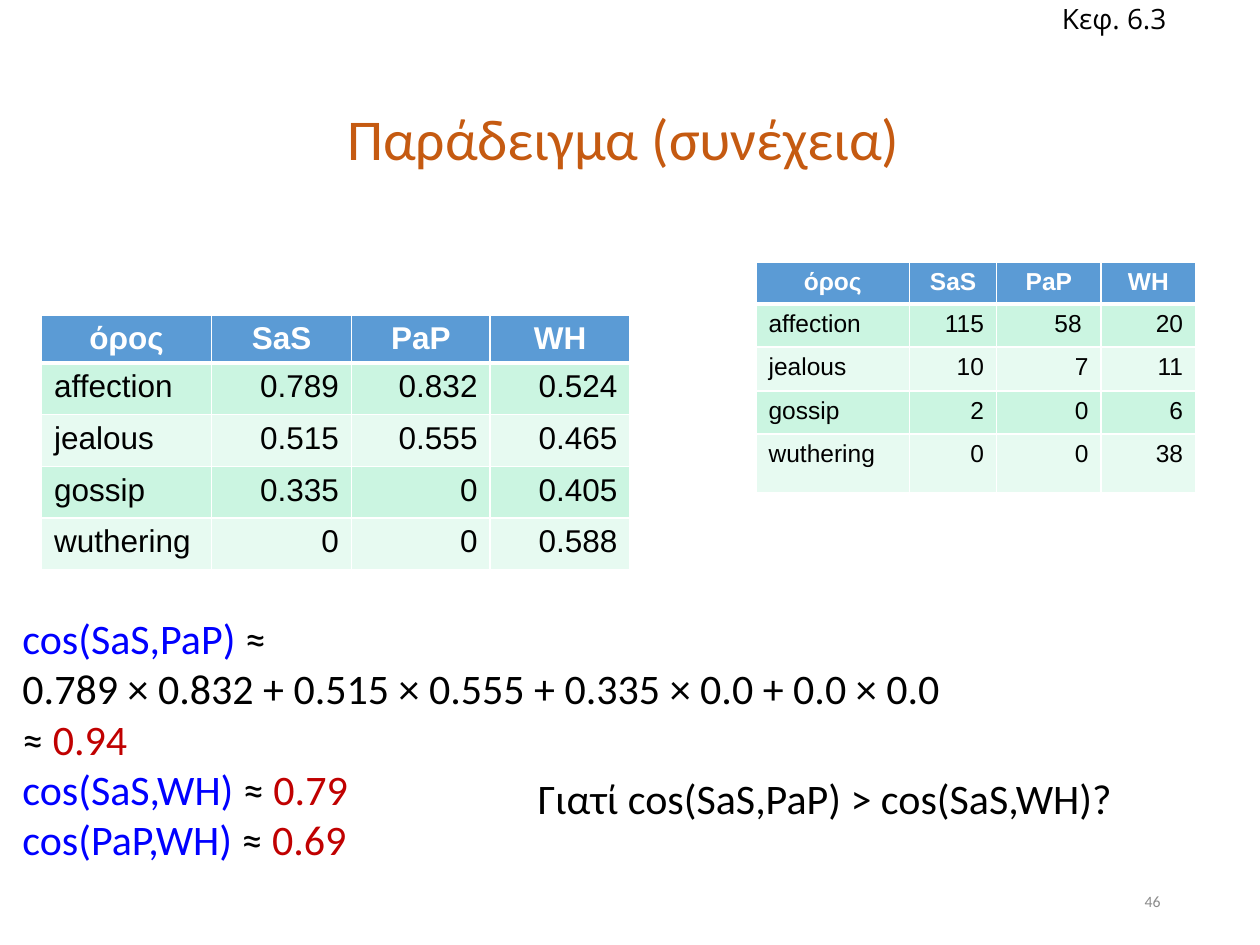
"""Build the slide that compares three novels by cosine similarity."""
from dataclasses import dataclass

from lxml.etree import SubElement
from pptx import Presentation
from pptx.dml.color import RGBColor
from pptx.enum.text import MSO_ANCHOR as Anchor, MSO_AUTO_SIZE as AutoSize, PP_ALIGN as Align
from pptx.oxml.ns import qn
from pptx.util import Inches, Pt

COLORS = {
    "title": "C55A11", "text": "000000", "cosine": "0000FF", "result": "C00000",
    "page": "8C8C8C", "white": "FFFFFF", "header": "5B9BD5",
    "odd": "CBF5E1", "even": "E7FAF1",
}
WIDTH, HEIGHT = Inches(10), Inches(7.5)
Lines = list[list[tuple[str, str]]]


@dataclass
class Note:
    """Text lines with a box in percent of the slide."""
    box: tuple[float, float, float, float]
    lines: Lines
    size: float
    font: str = "Calibri"
    align: Align = Align.LEFT
    anchor: Anchor = Anchor.TOP
    grows: bool = True


@dataclass
class TermTable:
    """Term weights with columns and rows in percent of the slide."""
    left: float
    top: float
    columns: list[float]
    rows: list[float]
    size: float
    weights: list[list[str]]


def across(share: float) -> int:
    """Turn a percentage of the slide width into a length."""
    return round(WIDTH * share / 100)


def down(share: float) -> int:
    """Turn a percentage of the slide height into a length."""
    return round(HEIGHT * share / 100)


def place(box: tuple[float, float, float, float]) -> tuple[int, int, int, int]:
    """Turn a percentage box into lengths."""
    left, top, width, height = box
    return across(left), down(top), across(width), down(height)


def add_run(paragraph, words: str, color: str, size: float, font: str, bold: bool = False) -> None:
    """Add one formatted run."""
    run = paragraph.add_run()
    run.text = words
    run.font.name, run.font.size, run.font.bold = font, Pt(size), bold
    run.font.color.rgb = RGBColor.from_string(COLORS[color])


def add_note(slide, note: Note) -> None:
    """Draw a text box with its lines."""
    frame = slide.shapes.add_textbox(*place(note.box)).text_frame
    frame.word_wrap = not note.grows
    frame.auto_size = AutoSize.SHAPE_TO_FIT_TEXT if note.grows else AutoSize.NONE
    frame.vertical_anchor = note.anchor
    for index, line in enumerate(note.lines):
        paragraph = frame.add_paragraph() if index else frame.paragraphs[0]
        paragraph.alignment = note.align
        for words, color in line:
            add_run(paragraph, words, color, note.size, note.font)


def add_border(cell, side: str, points: float) -> None:
    """Give one side of a cell a white line."""
    line = SubElement(cell._tc.get_or_add_tcPr(), qn(f"a:ln{side}"), w=str(Pt(points)))
    SubElement(SubElement(line, qn("a:solidFill")), qn("a:srgbClr"), val=COLORS["white"])


def add_term_table(slide, terms: TermTable) -> None:
    """Draw a banded table of terms and weights."""
    box = (terms.left, terms.top, sum(terms.columns), sum(terms.rows))
    table = slide.shapes.add_table(len(terms.rows), len(terms.columns), *place(box)).table
    for column, share in zip(table.columns, terms.columns):
        column.width = across(share)
    for row, share in zip(table.rows, terms.rows):
        row.height = down(share)
    for row_index, weights in enumerate([["όρος", "SaS", "PaP", "WH"], *terms.weights]):
        is_header = row_index == 0
        band = "header" if is_header else "odd" if row_index % 2 else "even"
        for column_index, words in enumerate(weights):
            cell = table.cell(row_index, column_index)
            for side in "LRTB":
                thick = (row_index, side) in {(0, "B"), (1, "T")}
                add_border(cell, side, 3 if thick else 1)
            cell.fill.solid()
            cell.fill.fore_color.rgb = RGBColor.from_string(COLORS[band])
            paragraph = cell.text_frame.paragraphs[0]
            paragraph.alignment = (
                Align.CENTER if is_header else Align.RIGHT if column_index else Align.LEFT
            )
            add_run(paragraph, words, "white" if is_header else "text", terms.size, "Arial", is_header)


def add_title(slide, words: str) -> None:
    """Move and format the title placeholder."""
    title = slide.shapes.title
    title.left, title.top, title.width, title.height = place((6.9, 5.33, 86.2, 19.33))
    title.text_frame.vertical_anchor = Anchor.MIDDLE
    paragraph = title.text_frame.paragraphs[0]
    paragraph.alignment, paragraph.line_spacing = Align.CENTER, 0.9
    add_run(paragraph, words, "title", 33, "Calibri")


NORMALIZED = TermTable(3.3, 33.33, [13.5, 11.1, 11, 11.1], [4.93] + [5.47] * 4, 18, [
    ["affection", "0.789", "0.832", "0.524"],
    ["jealous", "0.515", "0.555", "0.465"],
    ["gossip", "0.335", "0", "0.405"],
    ["wuthering", "0", "0", "0.588"],
])
COUNTS = TermTable(60, 27.73, [12.2, 6.9, 8.3, 7.5], [4.4, 4.53, 4.67, 4.53, 6.27], 14, [
    ["affection", "115", "58 ", "20"],
    ["jealous", "10", "7", "11"],
    ["gossip", "2", "0", "6"],
    ["wuthering", "0", "0", "38"],
])
PAGE = Note((70.6, 92.67, 22.5, 5.33), [[("46", "page")]], 9,
            align=Align.RIGHT, anchor=Anchor.MIDDLE, grows=False)
SIMILARITIES = Note((0.8, 64.13, 76.4, 28.27), [
    [("cos(SaS,PaP) ", "cosine"), ("≈", "text")],
    [("0.789 × 0.832 + 0.515 × 0.555 + 0.335 × 0.0 + 0.0 × 0.0", "text")],
    [("≈ ", "text"), ("0.94", "result")],
    [("cos(SaS,WH)", "cosine"), (" ≈ ", "text"), ("0.79", "result")],
    [("cos(PaP,WH) ", "cosine"), ("≈ ", "text"), ("0.69", "result")],
], 24)
QUESTION = Note((41.7, 81.07, 48, 6.67), [[("Γιατί cos(SaS,PaP) > cos(SaS,WH)?", "text")]], 24)
CHAPTER = Note((83.3, -0.53, 11, 4.93), [[("Κεφ. 6.3", "text")]], 16,
               font="Open Sans", anchor=Anchor.MIDDLE)


def main() -> None:
    """Build and save the slide."""
    deck = Presentation()
    deck.slide_width, deck.slide_height = WIDTH, HEIGHT
    slide = deck.slides.add_slide(deck.slide_layouts.get_by_name("Title Only"))
    add_title(slide, "Παράδειγμα (συνέχεια) ")
    add_term_table(slide, NORMALIZED)
    for note in (PAGE, SIMILARITIES, QUESTION, CHAPTER):
        add_note(slide, note)
    add_term_table(slide, COUNTS)
    deck.save("out.pptx")


if __name__ == "__main__":
    main()
